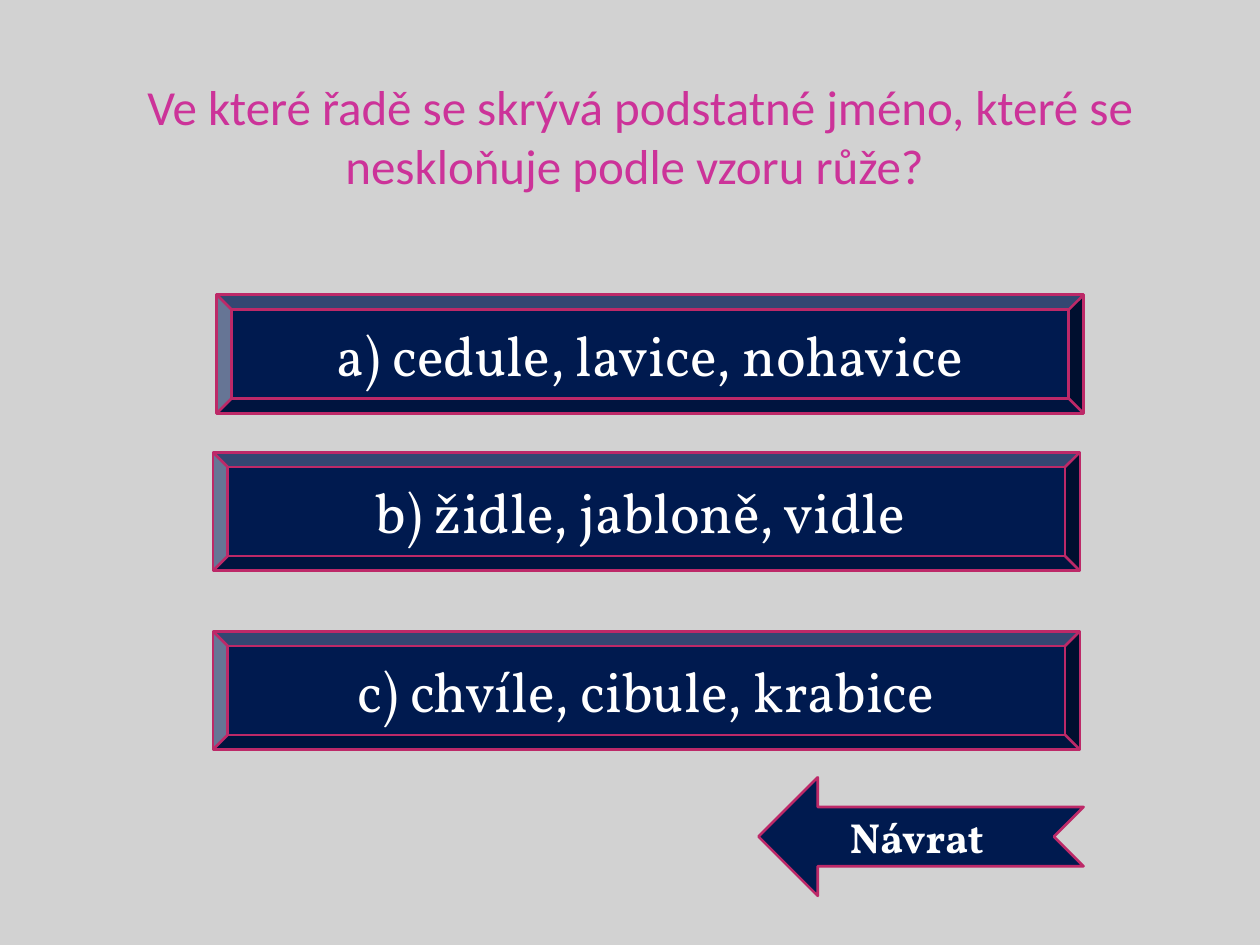
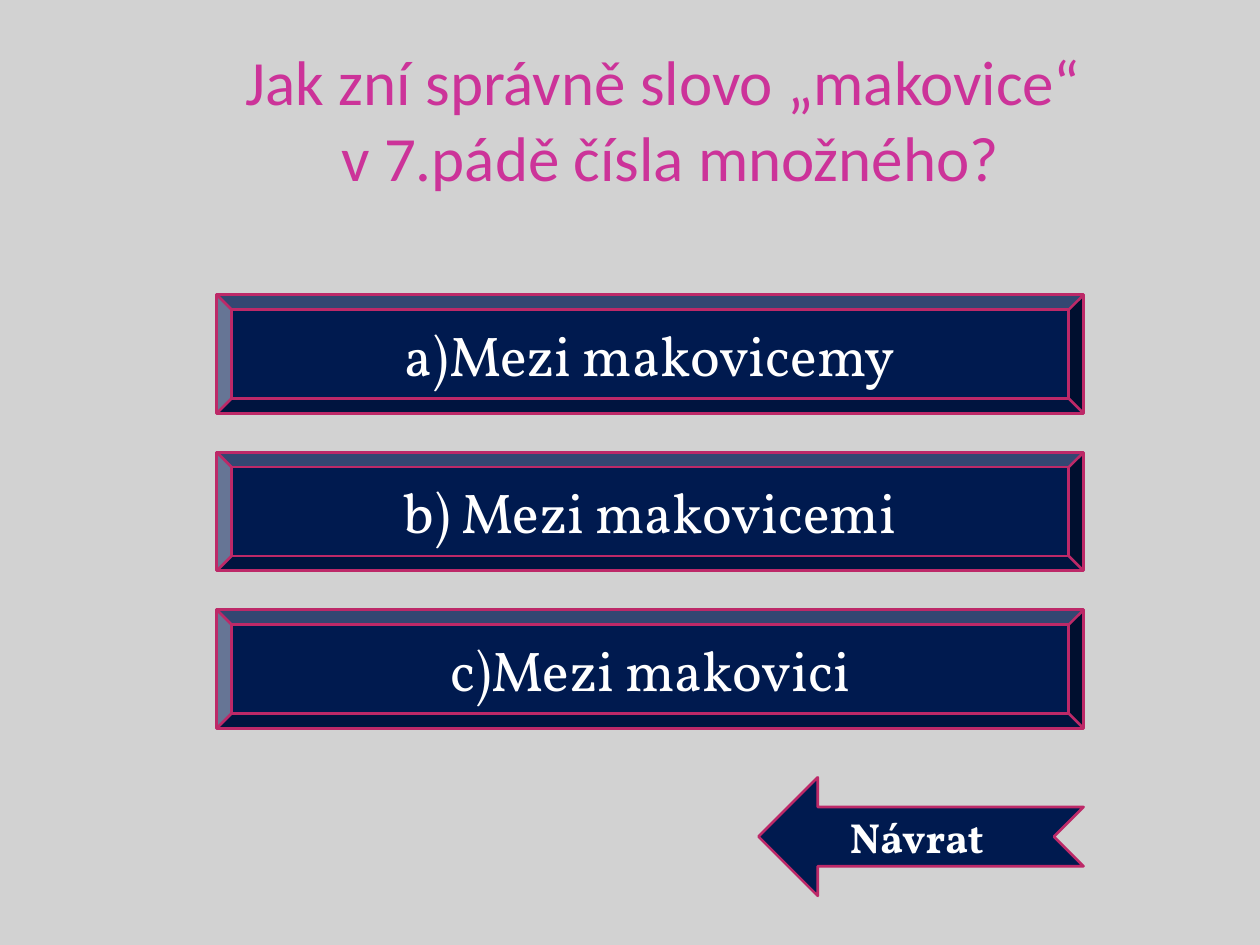
"""Build two quiz slides on Czech noun declension, each with three answers and a return arrow."""
from typing import NamedTuple

import pptx
import pptx.dml.color
import pptx.enum.shapes
import pptx.enum.text
import pptx.util

Inches = pptx.util.Inches
Pt = pptx.util.Pt
Anchor = pptx.enum.text.MSO_ANCHOR
Preset = pptx.enum.shapes.MSO_SHAPE

COLOURS = {
    "background": "D2D2D2",
    "question": "CC3399",
    "button": "001A4F",
    "outline": "BD2968",
    "label": "FFFFFF",
}
QUESTION_FONT = "Calibri"
BUTTON_FONT = "Vollkorn"
BUTTON_HEIGHT = 0.94
TITLE_ONLY = 5


class Answer(NamedTuple):
    text: str
    left: float
    top: float


class Question(NamedTuple):
    lines: list[str]
    size: int
    left: float
    answers: list[Answer]


QUESTIONS = [
    Question(
        ["Ve které řadě se skrývá podstatné jméno, které se neskloňuje podle vzoru růže? "],
        28,
        0.98,
        [
            Answer("a) cedule, lavice, nohavice", 1.72, 2.34),
            Answer("b) židle, jabloně, vidle ", 1.69, 3.59),
            Answer("c) chvíle, cibule, krabice", 1.69, 5.01),
        ],
    ),
    Question(
        ["Jak zní správně slovo „makovice“ ", "v 7.pádě čísla množného?"],
        36,
        1.22,
        [
            Answer(text, 1.72, 2.34 + 1.25 * row)
            for row, text in enumerate(["a)Mezi makovicemy", "b) Mezi makovicemi", "c)Mezi makovici"])
        ],
    ),
]


def colour(name: str) -> pptx.dml.color.RGBColor:
    """Return the named colour of the deck."""
    return pptx.dml.color.RGBColor.from_string(COLOURS[name])


def add_run(paragraph, text: str, font: str, size: int, shade: str, bold: bool = False) -> None:
    """Append one formatted run to a paragraph."""
    run = paragraph.add_run()
    run.text = text
    run.font.name = font
    run.font.size = Pt(size)
    run.font.bold = bold
    run.font.color.rgb = colour(shade)


def add_question(slide, question: Question) -> None:
    """Place the question in the title placeholder."""
    title = slide.shapes.title
    title.left, title.top = Inches(question.left), Inches(0.29)
    title.width, title.height = Inches(8.2), Inches(1.25)
    frame = title.text_frame
    frame.auto_size = pptx.enum.text.MSO_AUTO_SIZE.NONE
    frame.word_wrap = True
    frame.vertical_anchor = Anchor.BOTTOM
    frame.margin_left = frame.margin_right = frame.margin_bottom = 0
    frame.margin_top = Inches(0.05)
    paragraph = frame.paragraphs[0]
    paragraph.alignment = pptx.enum.text.PP_ALIGN.CENTER
    for number, line in enumerate(question.lines):
        if number:
            paragraph.add_line_break()
        add_run(paragraph, line, QUESTION_FONT, question.size, "question")


def add_button(slide, preset: Preset, answer: Answer, width: float, size: int, bold: bool = False):
    """Draw one outlined button with a centred label and return it."""
    button = slide.shapes.add_shape(
        preset, Inches(answer.left), Inches(answer.top), Inches(width), Inches(BUTTON_HEIGHT)
    )
    button.shadow.inherit = False
    button.fill.solid()
    button.fill.fore_color.rgb = colour("button")
    button.line.color.rgb = colour("outline")
    button.line.width = Pt(1.5)
    button.text_frame.word_wrap = True
    button.text_frame.vertical_anchor = Anchor.MIDDLE
    paragraph = button.text_frame.paragraphs[0]
    paragraph.alignment = pptx.enum.text.PP_ALIGN.CENTER
    add_run(paragraph, answer.text, BUTTON_FONT, size, "label", bold)
    return button


def add_return_arrow(slide) -> None:
    """Draw the arrow that points back to the left."""
    arrow = add_button(slide, Preset.NOTCHED_RIGHT_ARROW, Answer("Návrat ", 6.02, 6.17), 2.58, 24, True)
    arrow.element.spPr.xfrm.set("flipH", "1")


def main() -> None:
    """Build and save the deck."""
    deck = pptx.Presentation()
    deck.slide_width, deck.slide_height = Inches(10), Inches(7.5)
    backdrop = deck.slide_master.background.fill
    backdrop.solid()
    backdrop.fore_color.rgb = colour("background")
    for question in QUESTIONS:
        slide = deck.slides.add_slide(deck.slide_layouts[TITLE_ONLY])
        add_question(slide, question)
        for answer in question.answers:
            add_button(slide, Preset.BEVEL, answer, 6.88, 32)
        add_return_arrow(slide)
    deck.save("out.pptx")


if __name__ == "__main__":
    main()
